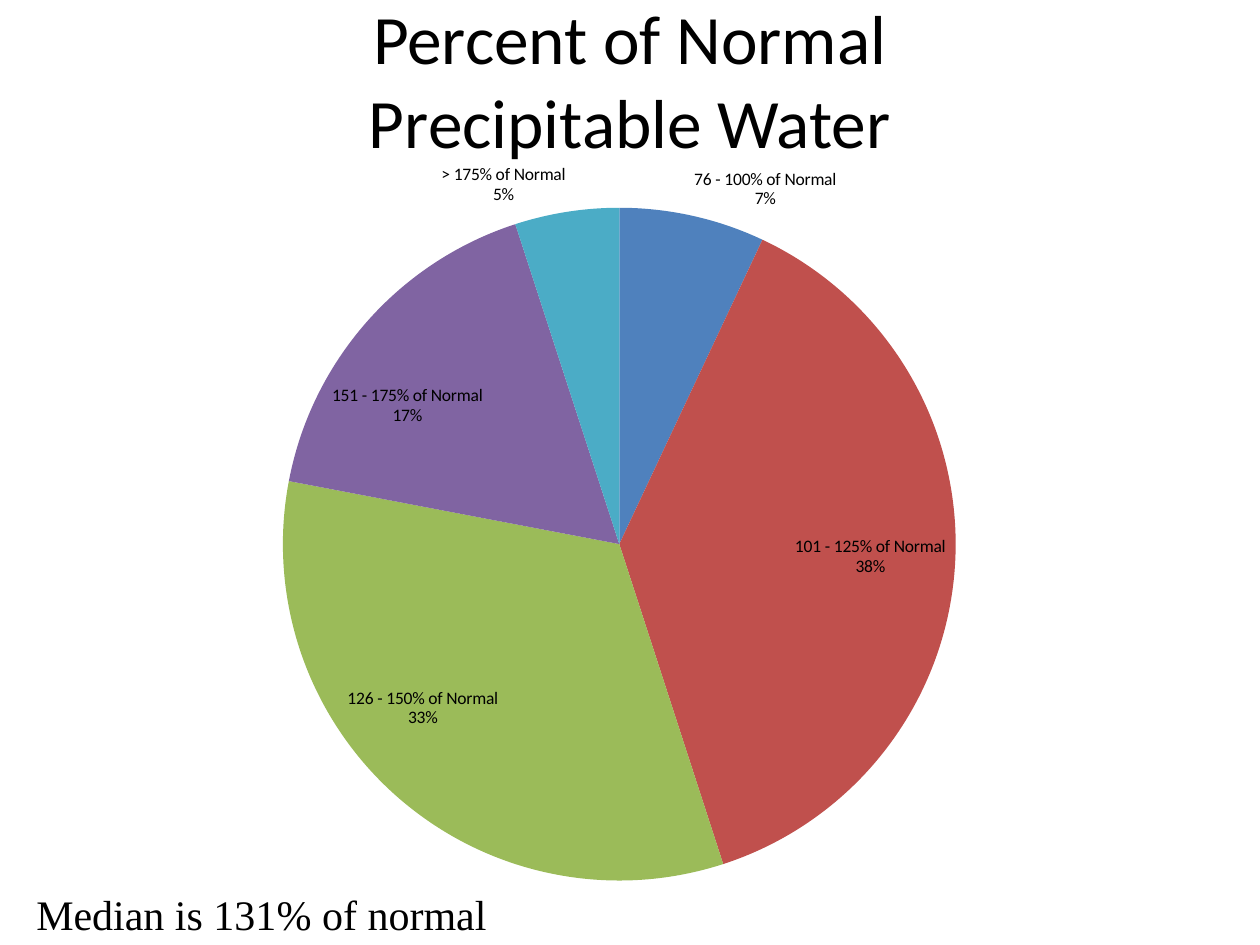
from lxml import etree
from pptx import Presentation
from pptx import util as u
from pptx.chart.data import CategoryChartData
from pptx.dml.color import RGBColor
from pptx.enum import chart as ch, text as tx
from pptx.oxml.ns import qn

BLACK = "000000"
SHARES = [
    ("76 - 100% of Normal", 7, "4F81BD"),
    ("101 - 125% of Normal", 38, "C0504D"),
    ("126 - 150% of Normal", 33, "9BBB59"),
    ("151 - 175% of Normal", 17, "8064A2"),
    ("> 175% of Normal", 5, "4BACC6"),
]


def paint(item, code):
    item.rgb = RGBColor.from_string(code)


def style(font, name, size):
    font.name = name
    font.size = u.Pt(size)
    paint(font.color, BLACK)


def add_text(slide, box, words, name, size, wrap=True):
    frame = slide.shapes.add_textbox(*map(u.Cm, box)).text_frame
    frame.text = words
    frame.word_wrap = wrap
    frame.vertical_anchor = tx.MSO_ANCHOR.MIDDLE
    for par in frame.paragraphs:
        par.alignment = tx.PP_ALIGN.CENTER
        for run in par.runs:
            style(run.font, name, size)
    return frame


def place_plot(chart, **area):
    """Fix the inner plot area, as fractions of the chart."""
    plot = chart._chartSpace.chart.plotArea
    for old in plot.findall(qn("c:layout")):
        plot.remove(old)
    layout = etree.Element(qn("c:layout"))
    manual = etree.SubElement(layout, qn("c:manualLayout"))
    rules = dict(layoutTarget="inner", xMode="edge", yMode="edge", **area)
    for tag, val in rules.items():
        etree.SubElement(manual, qn("c:" + tag)).set("val", str(val))
    plot.insert(0, layout)


def add_pie(slide, box, shares):
    data = CategoryChartData()
    data.categories = [name for name, _, _ in shares]
    data.add_series("Series 1", [val for _, val, _ in shares])
    chart = slide.shapes.add_chart(
        ch.XL_CHART_TYPE.PIE, *map(u.Cm, box), data).chart
    chart.has_title = False
    chart.has_legend = False
    style(chart.font, "Calibri", 10)
    place_plot(chart, x=0.21, y=0.08, w=0.57, h=0.89)

    # Slice colours
    plot = chart.plots[0]
    plot.vary_by_categories = True
    for i, (_, _, code) in enumerate(shares):
        fill = plot.series[0].points[i].format.fill
        fill.solid()
        paint(fill.fore_color, code)

    # Category above percentage
    plot.has_data_labels = True
    labels = plot.data_labels
    labels.show_value = False
    labels.show_category_name = True
    labels.show_percentage = True
    labels.number_format = "0%"
    labels.number_format_is_linked = False
    labels.position = ch.XL_LABEL_POSITION.BEST_FIT
    style(labels.font, "Calibri", 10)
    mark = etree.Element(qn("c:separator"))
    mark.text = "\n"
    labels._element.find(qn("c:showBubbleSize")).addnext(mark)


def main():
    prs = Presentation()
    prs.slide_width, prs.slide_height = u.Cm(25.4), u.Cm(19.05)
    slide = prs.slides.add_slide(prs.slide_layouts[6])

    # Title, raised by its bottom inset
    title = add_text(slide, (1.27, 0.76, 22.86, 3.18),
                     "Percent of Normal\vPrecipitable Water", "Calibri", 39.6)
    title.margin_bottom = u.Cm(1.65)

    # Chart
    add_pie(slide, (0.64, 2.97, 23.93, 15.24), SHARES)

    # Median note
    note = add_text(slide, (0.43, 17.78, 9.68, 1.27),
                    "Median is 131% of normal", "Times New Roman", 24, False)
    note.auto_size = tx.MSO_AUTO_SIZE.SHAPE_TO_FIT_TEXT

    prs.save("out.pptx")


if __name__ == "__main__":
    main()
